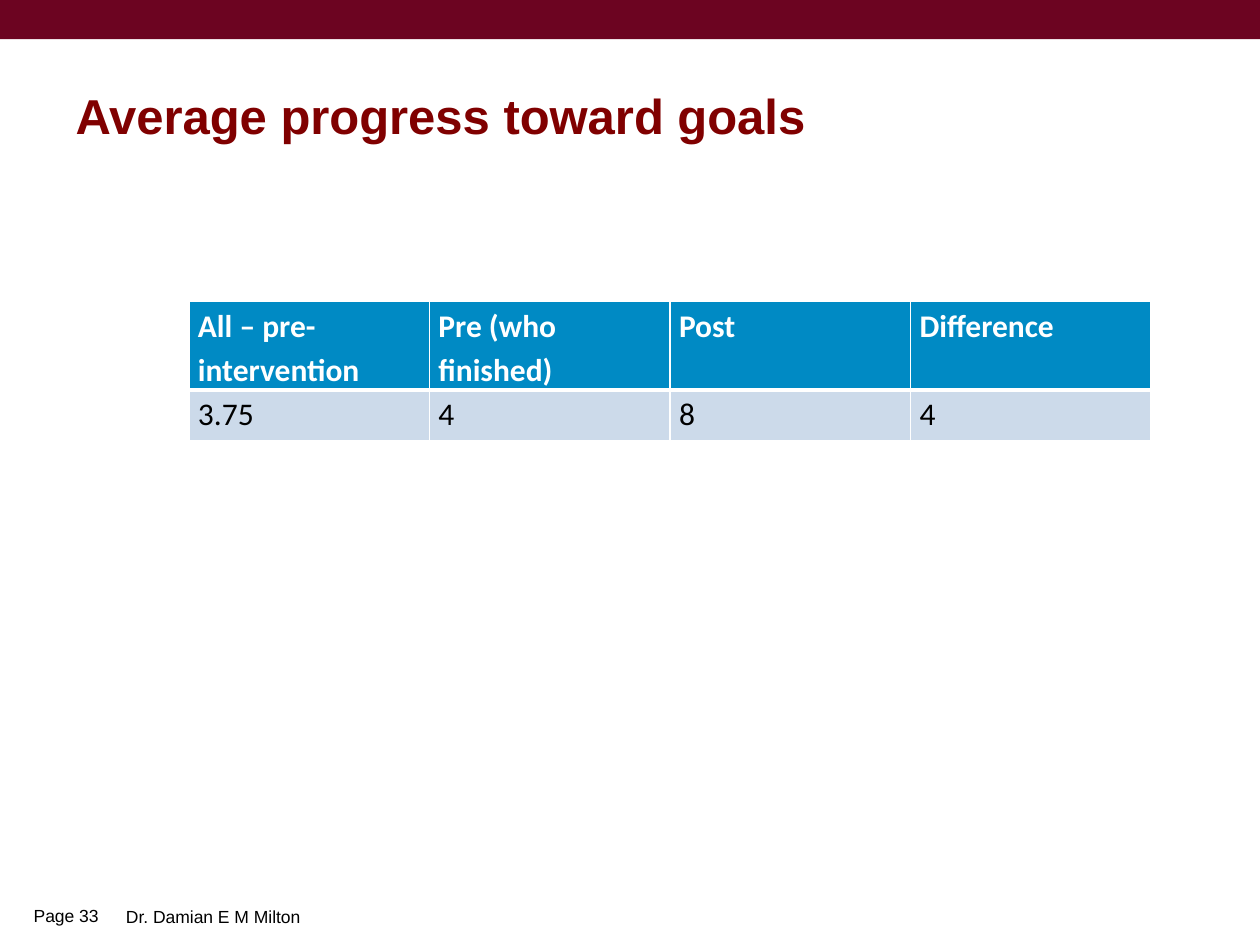
from lxml.etree import SubElement
from pptx import Presentation
from pptx.dml.color import RGBColor
from pptx.enum.shapes import MSO_SHAPE
from pptx.enum.text import MSO_ANCHOR, PP_ALIGN
from pptx.oxml.ns import qn
from pptx.util import Cm, Pt

# Content
TITLE = "Average progress toward goals"
ROWS = [
    ["All – pre-intervention", "Pre (who finished)", "Post", "Difference"],
    ["3.75", "4", "8", "4"],
]
# Text, left, top, width, height (cm), anchor
FOOTERS = [
    ("Page 33", 0.43, 18.08, 1.88, 0.74, MSO_ANCHOR.MIDDLE),
    ("Dr. Damian E M Milton", 2.29, 18.14, 18.03, 0.69, MSO_ANCHOR.TOP),
]

# Table style: fill, text colour, bold, height (cm), top and bottom line (pt)
ROW_STYLES = [
    ("008AC4", "FFFFFF", True, 1.78, 1, 3),
    ("CCDAEA", "000000", False, 1.03, 3, 1),
]
COLUMN_WIDTH = 4.85


def color(value):
    return RGBColor.from_string(value)


def set_font(paragraph, name, size, value, bold=False):
    font = paragraph.font
    font.name, font.size, font.bold = name, Pt(size), bold
    font.color.rgb = color(value)


def set_borders(cell, top, bottom):
    properties = cell._tc.get_or_add_tcPr()
    for tag, width in (("lnL", 1), ("lnR", 1), ("lnT", top), ("lnB", bottom)):
        line = SubElement(properties, qn(f"a:{tag}"), w=str(Pt(width)))
        fill = SubElement(line, qn("a:solidFill"))
        SubElement(fill, qn("a:srgbClr"), val="FFFFFF")


presentation = Presentation()
presentation.slide_width, presentation.slide_height = Cm(25.4), Cm(19.05)
slide = presentation.slides.add_slide(presentation.slide_layouts[5])

# Top band
band = slide.shapes.add_shape(MSO_SHAPE.RECTANGLE, 0, 0, Cm(25.4), Cm(0.79))
band.shadow.inherit = False
band.fill.solid()
band.fill.fore_color.rgb = color("6C0421")
band.line.fill.background()

# Title
title = slide.shapes.title
title.left, title.top, title.width, title.height = Cm(1.27), Cm(1.52), Cm(23.04), Cm(1.6)
title.text_frame.text = TITLE
title.text_frame.vertical_anchor = MSO_ANCHOR.MIDDLE
paragraph = title.text_frame.paragraphs[0]
paragraph.alignment = PP_ALIGN.LEFT
set_font(paragraph, "Arial", 28, "800000", bold=True)

# Results table
column_count = len(ROWS[0])
table = slide.shapes.add_table(
    len(ROWS), column_count, Cm(3.81), Cm(6.08),
    Cm(COLUMN_WIDTH * column_count), Cm(sum(style[3] for style in ROW_STYLES)),
).table
for column in table.columns:
    column.width = Cm(COLUMN_WIDTH)
for row, texts, style in zip(table.rows, ROWS, ROW_STYLES):
    fill, text_color, bold, height, top, bottom = style
    row.height = Cm(height)
    for cell, text in zip(row.cells, texts):
        cell.text = text
        cell.margin_left = cell.margin_right = Cm(0.18)
        cell.margin_top = cell.margin_bottom = 0
        set_borders(cell, top, bottom)
        cell.fill.solid()
        cell.fill.fore_color.rgb = color(fill)
        paragraph = cell.text_frame.paragraphs[0]
        paragraph.line_spacing = 1.15
        set_font(paragraph, "Calibri", 18, text_color, bold)

# Page number and author
for text, left, top, width, height, anchor in FOOTERS:
    box = slide.shapes.add_textbox(Cm(left), Cm(top), Cm(width), Cm(height))
    box.text_frame.word_wrap = True
    box.text_frame.vertical_anchor = anchor
    box.text_frame.text = text
    set_font(box.text_frame.paragraphs[0], "Arial", 10, "000000")

presentation.save("out.pptx")
